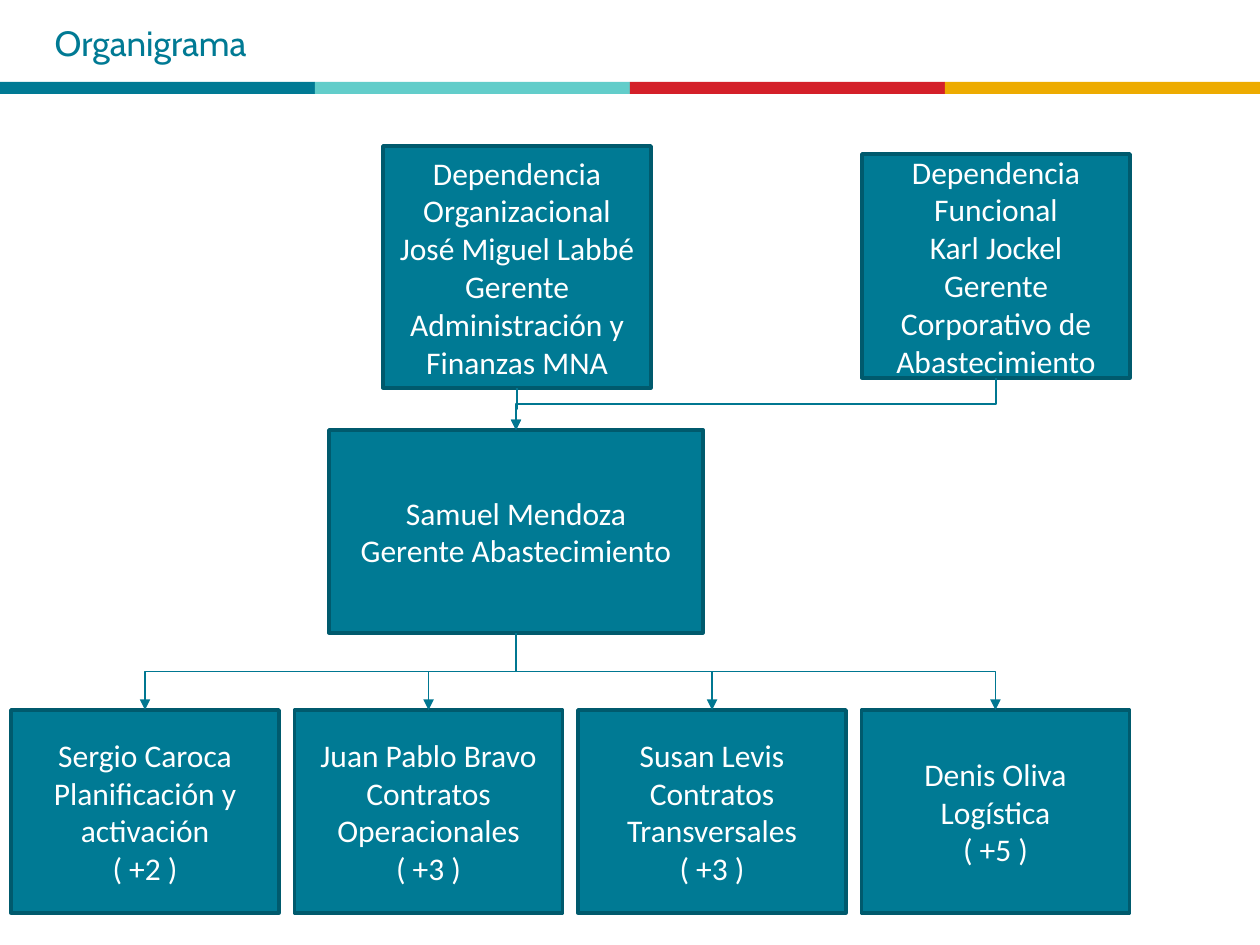
from lxml import etree
from pptx import Presentation
from pptx.dml.color import RGBColor
from pptx.enum.shapes import MSO_CONNECTOR as CONN, MSO_SHAPE as SHAPE
from pptx.enum.text import MSO_ANCHOR as ANCHOR, MSO_AUTO_SIZE as FIT, PP_ALIGN as ALIGN
from pptx.oxml.ns import qn
from pptx.util import Emu, Pt

SCALE = 914400 / 126  # EMU per px
TEAL, EDGE, LINK = "007A94", "005A6D", "007791"
BOTTOM, TOP = 2, 0  # connection sites of a rectangle


def px(n):
    return Emu(round(n * SCALE))


def color(hex_text):
    return RGBColor.from_string(hex_text)


class Chart:
    title_font = {"name": "Cabin", "size": Pt(20), "bold": False}
    box_font = {"name": "Calibri", "size": Pt(18)}

    def __init__(self, slide):
        self.slide = slide

    def format(self, p, font, hex_text, align):
        p.alignment = align
        for key, value in font.items():
            setattr(p.font, key, value)
        p.font.color.rgb = color(hex_text)

    def title(self, text, x, y, w, h):
        sp = self.slide.shapes.title
        sp.left, sp.top, sp.width, sp.height = map(px, (x, y, w, h))
        tf = sp.text_frame
        tf.text = text
        tf.auto_size = FIT.NONE
        tf.vertical_anchor = ANCHOR.MIDDLE
        p = tf.paragraphs[0]
        p.line_spacing = Pt(20)
        self.format(p, self.title_font, TEAL, ALIGN.LEFT)

    def rect(self, fill, x, y, w, h):
        sp = self.slide.shapes.add_shape(SHAPE.RECTANGLE, *map(px, (x, y, w, h)))
        sp.shadow.inherit = False
        sp.fill.solid()
        sp.fill.fore_color.rgb = color(fill)
        sp.line.fill.background()
        return sp

    def box(self, lines, x, y, w, h):
        sp = self.rect(TEAL, x, y, w, h)
        sp.line.color.rgb = color(EDGE)
        sp.line.width = Pt(2)
        tf = sp.text_frame
        tf.word_wrap = True
        tf.vertical_anchor = ANCHOR.MIDDLE
        tf.text = "\n".join(lines)
        for p in tf.paragraphs:
            self.format(p, self.box_font, "FFFFFF", ALIGN.CENTER)
        return sp

    def link(self, upper, lower):
        c = self.slide.shapes.add_connector(CONN.ELBOW, 0, 0, 0, 0)
        c.begin_connect(upper, BOTTOM)
        c.end_connect(lower, TOP)
        # Turn the elbow so that it leaves and arrives vertically
        dx, dy = c.end_x - c.begin_x, c.end_y - c.begin_y
        mid_x, mid_y = c.begin_x + dx // 2, c.begin_y + dy // 2
        c.width, c.height = Emu(dy), Emu(abs(dx))
        c.left, c.top = Emu(mid_x - dy // 2), Emu(mid_y - abs(dx) // 2)
        xfrm = c._element.spPr.xfrm
        xfrm.set("rot", str((270 if dx > 0 else 90) * 60000))
        xfrm.set("flipH", "1" if dx > 0 else "0")
        # Line, arrowhead, no shadow
        c.line.color.rgb = color(LINK)
        c.line.width = Pt(0.75)
        etree.SubElement(c.line._get_or_add_ln(), qn("a:tailEnd"), type="triangle")
        etree.SubElement(c._element.spPr, qn("a:effectLst"))


def main():
    prs = Presentation()
    prs.slide_width, prs.slide_height = px(1260), px(945)
    chart = Chart(prs.slides.add_slide(prs.slide_layouts[5]))

    # Heading and colour band
    for i, fill in enumerate((TEAL, "62CDCA", "D42029", "EDAB00")):
        chart.rect(fill, 315 * i, 82, 315, 12)
    chart.title("Organigrama", 42, 14, 975, 63)

    # Managers
    manager = chart.box(["Samuel Mendoza", "Gerente Abastecimiento"], 329, 430, 374, 203)
    heads = [
        chart.box(["Dependencia Organizacional", "José Miguel Labbé",
                   "Gerente Administración y Finanzas MNA"], 383, 146, 268, 242),
        chart.box(["Dependencia Funcional", "Karl Jockel",
                   "Gerente Corporativo de Abastecimiento"], 862, 154, 268, 224),
    ]
    for head in heads:
        chart.link(head, manager)

    # Teams
    teams = [
        ("Sergio Caroca", "Planificación y activación", "( +2 )"),
        ("Juan Pablo Bravo", "Contratos Operacionales", "( +3 )"),
        ("Susan Levis", "Contratos Transversales", "( +3 )"),
        ("Denis Oliva", "Logística", "( +5 )"),
    ]
    for i, lines in enumerate(teams):
        chart.link(manager, chart.box(lines, 11 + 283.5 * i, 710, 268, 203))

    prs.save("out.pptx")


if __name__ == "__main__":
    main()
